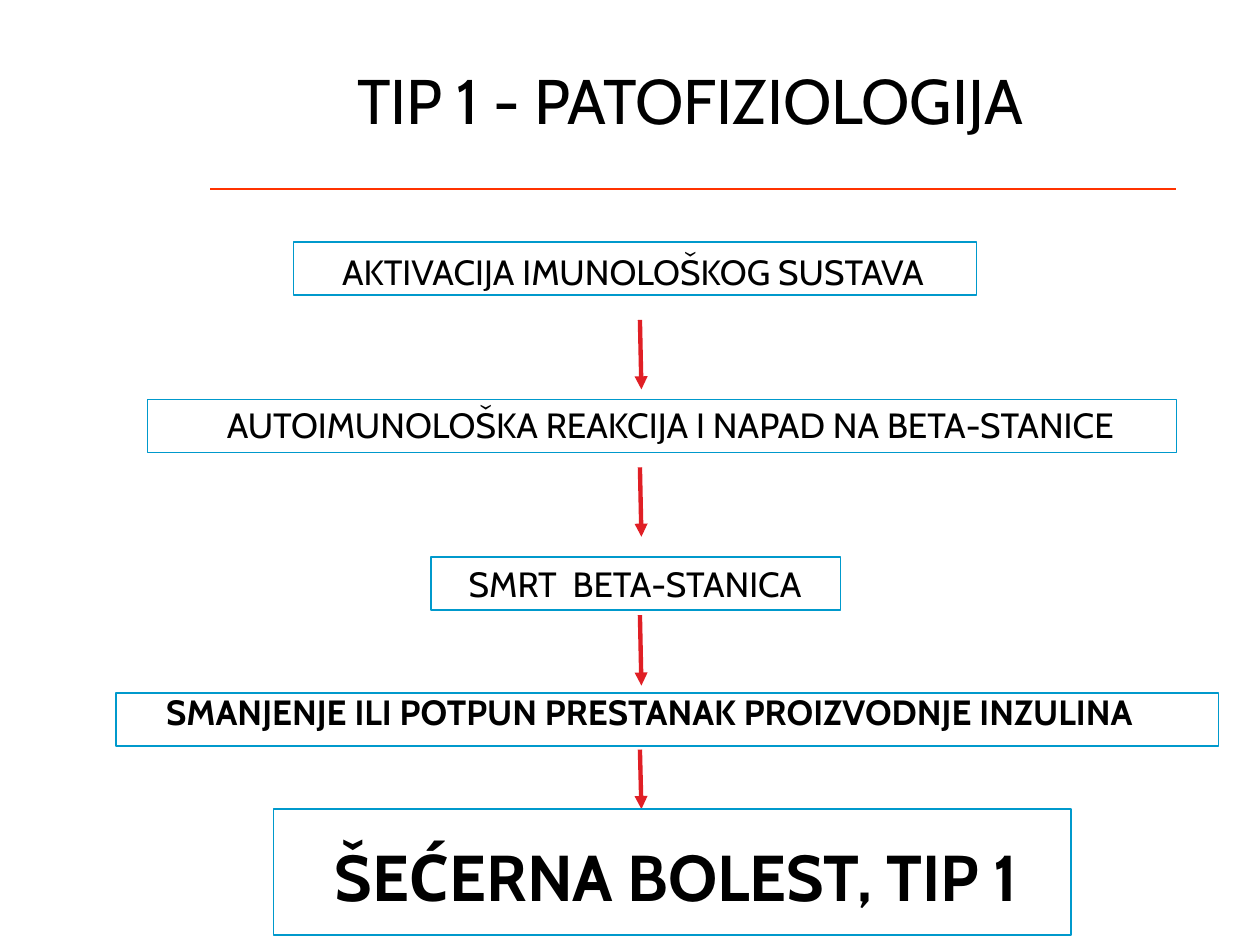
from lxml import etree
from pptx import Presentation
from pptx.dml.color import RGBColor
from pptx.enum.shapes import MSO_CONNECTOR, MSO_SHAPE
from pptx.enum.text import MSO_ANCHOR, PP_ALIGN
from pptx.oxml.ns import qn
from pptx.util import Cm, Pt

LINE = MSO_CONNECTOR.STRAIGHT
RECT = MSO_SHAPE.RECTANGLE
TOP = MSO_ANCHOR.TOP
CENTER = PP_ALIGN.CENTER

FONT = "Cabin"
BLACK, RED, ORANGE, BLUE = "000000", "E01F25", "FF3300", "0099CC"

STEPS = [
    ("AKTIVACIJA IMUNOLOŠKOG SUSTAVA", 20, False,
     (2.74, 5.05, 20.04, 1.24), (5.92, 4.88, 13.77, 1.07)),
    ("AUTOIMUNOLOŠKA REAKCIJA I NAPAD NA BETA-STANICE", 20, False,
     (-1.7, 8.13, 30.43, 2.18), (2.97, 8.05, 20.75, 1.07)),
    ("SMRT  BETA-STANICA", 20, False,
     (6.25, 11.33, 13.11, 2.18), (8.69, 11.23, 8.26, 1.07)),
    ("SMANJENJE ILI POTPUN PRESTANAK PROIZVODNJE INZULINA", 20, True,
     (-2.31, 13.92, 30.81, 1.5), (2.34, 13.97, 22.23, 1.07)),
    ("ŠEĆERNA BOLEST, TIP 1", 37, True,
     (2.74, 16.87, 21.79, 2.18), (5.51, 16.31, 16.08, 2.54)),
]
ARROWS = [(6.45, 7.85), (9.42, 10.82), (12.4, 13.82), (15.11, 16.31)]


def color(code):
    return RGBColor.from_string(code)


def place(area):
    return [Cm(n) for n in area]


def add_text(slide, text, size, bold, area, pad=(0, 0)):
    frame = slide.shapes.add_textbox(*place(area)).text_frame
    frame.word_wrap = True
    frame.vertical_anchor = TOP
    frame.margin_left = frame.margin_right = Cm(pad[0])
    frame.margin_top = frame.margin_bottom = Cm(pad[1])
    para = frame.paragraphs[0]
    para.text = text
    para.alignment = CENTER
    font = para.font
    font.name, font.size, font.bold = FONT, Pt(size), bold
    font.color.rgb = color(BLACK)


def add_frame(slide, area):
    box = slide.shapes.add_shape(RECT, *place(area))
    box.shadow.inherit = False
    box.fill.background()
    box.line.color.rgb = color(BLUE)
    box.line.width = Pt(0.75)


def add_line(slide, ends, code, width, head=False):
    line = slide.shapes.add_connector(LINE, *place(ends))
    line.line.color.rgb = color(code)
    line.line.width = Pt(width)
    props = line._element.spPr
    if head:
        tail = etree.SubElement(props.find(qn("a:ln")), qn("a:tailEnd"))
        tail.set("type", "triangle")
    etree.SubElement(props, qn("a:effectLst"))


def main():
    deck = Presentation()
    deck.slide_width, deck.slide_height = Cm(25.4), Cm(19.05)
    slide = deck.slides.add_slide(deck.slide_layouts[6])
    for text, size, bold, area, _ in STEPS:
        add_text(slide, text, size, bold, area)
    for start, end in ARROWS:
        add_line(slide, (12.9, start, 12.93, end), RED, 2.5, head=True)
    add_text(slide, "TIP 1 - PATOFIZIOLOGIJA", 36, False,
             (4.29, 1.12, 19.25, 1.78), (0.25, 0.13))
    add_line(slide, (4.24, 3.81, 23.7, 3.81), ORANGE, 0.75)
    for *_, box in STEPS:
        add_frame(slide, box)
    deck.save("out.pptx")


if __name__ == "__main__":
    main()
